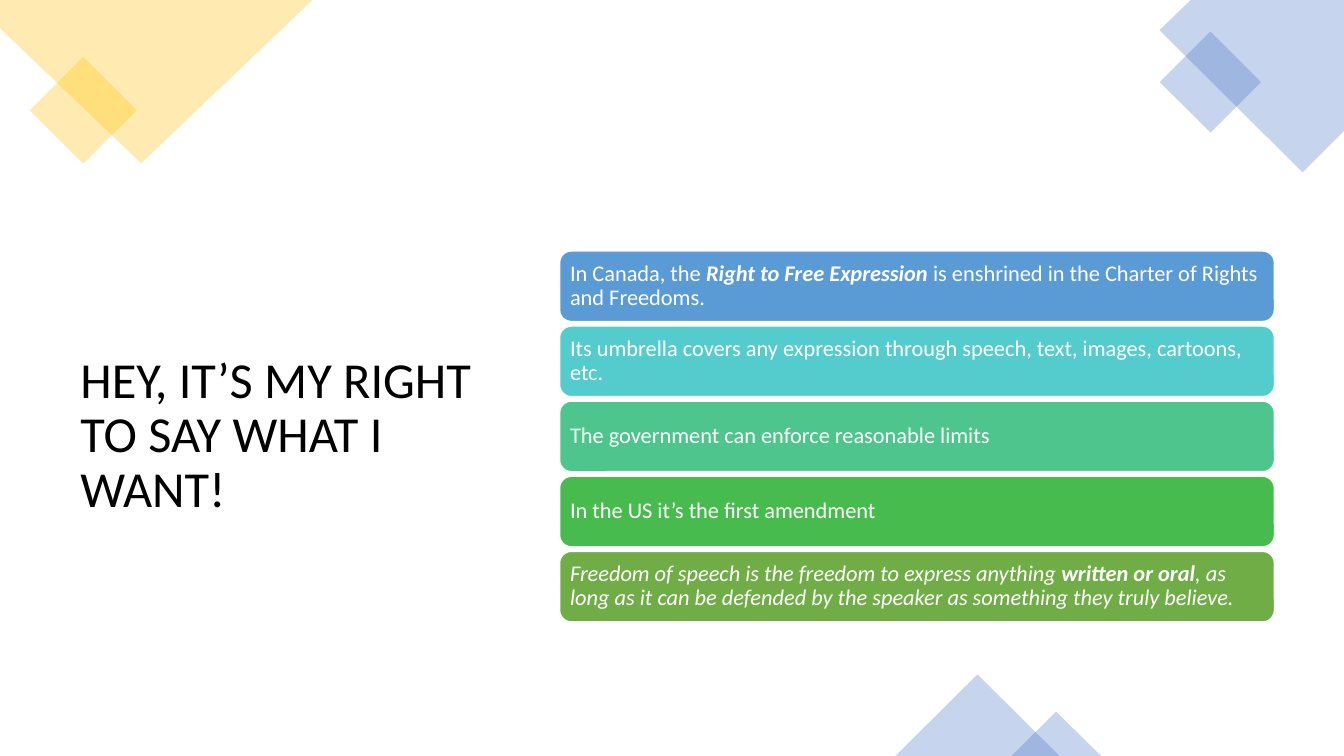
import pptx
import pptx.util
import pptx.dml.color
import pptx.enum.shapes
import pptx.enum.text
import pptx.oxml.ns
import lxml.etree

Inches = pptx.util.Inches
Shape = pptx.enum.shapes.MSO_SHAPE

COLORS = {
    "gold": "FFC000",
    "blue": "4472C4",
    "black": "000000",
    "white": "FFFFFF",
    "sky": "5B9BD5",
    "turquoise": "54CCCD",
    "mint": "4DC58D",
    "green": "48BB4F",
    "olive": "70AD47",
}

CARDS = [
    ("sky", [("In Canada, the ", False, False),
             ("Right to Free Expression ", True, True),
             ("is enshrined in the Charter of Rights and Freedoms.", False, False)]),
    ("turquoise", [("Its umbrella covers any expression through speech, text, "
                    "images, cartoons, etc.", False, False)]),
    ("mint", [("The government can enforce reasonable limits", False, False)]),
    ("green", [("In the US it’s the first amendment", False, False)]),
    ("olive", [("Freedom of speech is the freedom to express anything ", False, True),
               ("written or oral", True, True),
               (", as long as it can be defended by the speaker as something "
                "they truly believe.", False, True)]),
]


class SlideBuilder:
    font = "Calibri"
    line_spacing = 0.9

    def __init__(self, page):
        self.page = page

    def color(self, name):
        return pptx.dml.color.RGBColor.from_string(COLORS[name])

    def tint(self, shape, color, opacity=30):
        shape.shadow.inherit = False
        shape.line.fill.background()
        shape.fill.solid()
        shape.fill.fore_color.rgb = self.color(color)
        fill_color = shape.element.spPr.find(".//" + pptx.oxml.ns.qn("a:srgbClr"))
        alpha = lxml.etree.SubElement(fill_color, pptx.oxml.ns.qn("a:alpha"))
        alpha.set("val", str(opacity * 1000))

    def decoration(self, kind, left, top, width, height, color, rotation=0):
        shape = self.page.shapes.add_shape(
            kind, Inches(left), Inches(top), Inches(width), Inches(height))
        shape.rotation = rotation
        self.tint(shape, color)

    def polygon(self, points, color):
        corners = [(Inches(x), Inches(y)) for x, y in points]
        outline = self.page.shapes.build_freeform(*corners[0])
        outline.add_line_segments(corners[1:], close=True)
        self.tint(outline.convert_to_shape(), color)

    def set_text(self, box, spans, size, color):
        frame = box.text_frame
        frame.word_wrap = True
        frame.vertical_anchor = pptx.enum.text.MSO_ANCHOR.MIDDLE
        para = frame.paragraphs[0]
        para.alignment = pptx.enum.text.PP_ALIGN.LEFT
        para.line_spacing = self.line_spacing
        para.font.name = self.font
        para.font.size = pptx.util.Pt(size)
        para.font.color.rgb = self.color(color)
        for text, bold, italic in spans:
            span = para.add_run()
            span.text = text
            span.font.bold = bold
            span.font.italic = italic

    def title(self, text, left, top, width, height):
        box = self.page.shapes.add_textbox(
            Inches(left), Inches(top), Inches(width), Inches(height))
        self.set_text(box, [(text, False, False)], 36, "black")

    def card(self, spans, left, top, width, height, color):
        box = self.page.shapes.add_shape(
            Shape.ROUNDED_RECTANGLE,
            Inches(left), Inches(top), Inches(width), Inches(height))
        box.shadow.inherit = False
        box.fill.solid()
        box.fill.fore_color.rgb = self.color(color)
        box.line.color.rgb = self.color("white")
        box.line.width = pptx.util.Pt(1)
        frame = box.text_frame
        frame.margin_left = frame.margin_right = Inches(0.07)
        frame.margin_top = frame.margin_bottom = Inches(0.03)
        self.set_text(box, spans, 16, "white")


def main():
    deck = pptx.Presentation()
    deck.slide_width = Inches(13.33)
    deck.slide_height = Inches(7.5)
    builder = SlideBuilder(deck.slides.add_slide(deck.slide_layouts[6]))

    builder.title("HEY, IT’S MY RIGHT TO SAY WHAT I WANT!", 0.7, 1.86, 4.33, 4.94)

    builder.decoration(Shape.RECTANGLE, 0.45, 0.72, 0.75, 0.75, "gold", 45)
    builder.polygon([(0, 0), (3.1, 0), (1.4, 1.62), (0, 0.28)], "gold")
    builder.polygon(
        [(11.81, 0), (13.33, 0), (13.33, 1.3), (12.92, 1.71), (11.5, 0.3)], "blue")
    builder.decoration(Shape.RECTANGLE, 11.65, 0.46, 0.71, 0.71, "blue", 45)
    builder.decoration(Shape.ISOSCELES_TRIANGLE, 8.88, 6.69, 1.63, 0.81, "blue")
    builder.decoration(Shape.ISOSCELES_TRIANGLE, 10.03, 7.06, 0.89, 0.44, "blue")

    first_top, last_top = 2.49, 5.47
    pitch = (last_top - first_top) / (len(CARDS) - 1)
    for index, (color, spans) in enumerate(CARDS):
        builder.card(spans, 5.55, first_top + index * pitch, 7.09, 0.7, color)

    deck.save("out.pptx")


if __name__ == "__main__":
    main()
